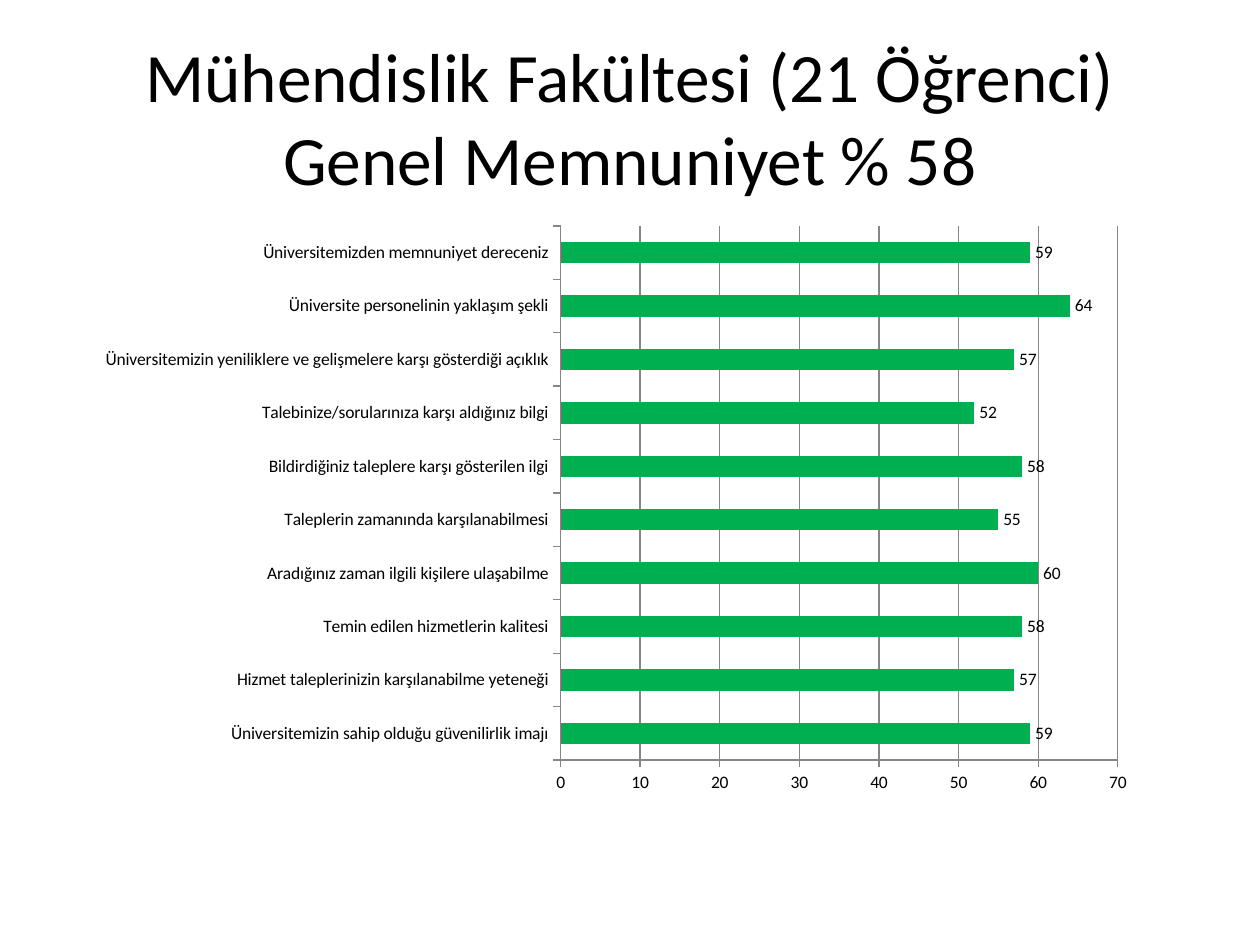
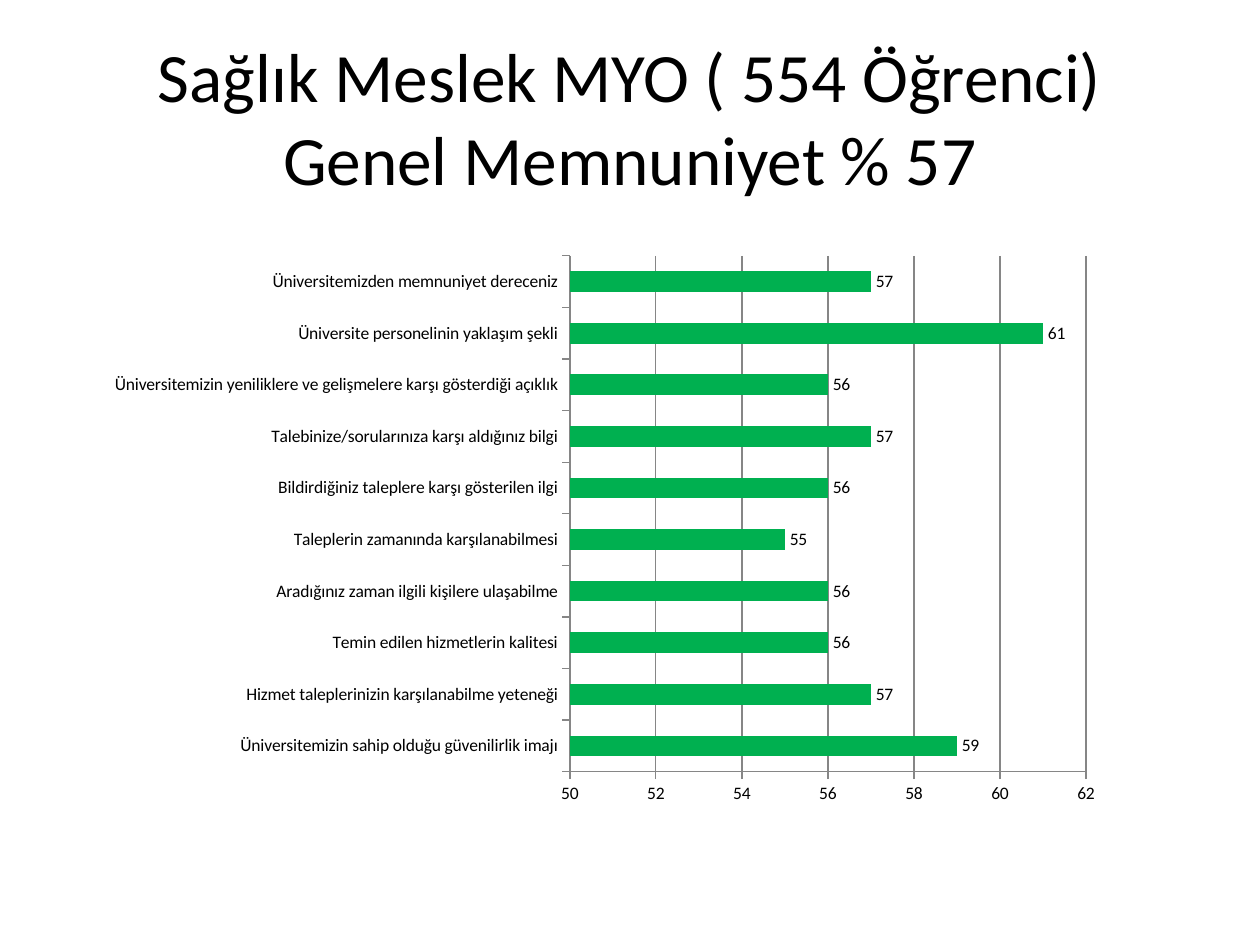
"""Build two survey slides with a satisfaction bar chart each."""
from dataclasses import dataclass

from pptx import Presentation
from pptx.chart.axis import _BaseAxis as Axis
from pptx.chart.data import CategoryChartData as ChartData
from pptx.dml.color import RGBColor
from pptx.enum.chart import XL_CHART_TYPE as ChartType
from pptx.enum.chart import XL_LABEL_POSITION as LabelPosition
from pptx.enum.chart import XL_TICK_MARK as TickMark
from pptx.enum.text import MSO_ANCHOR as Anchor
from pptx.enum.text import PP_ALIGN as Align
from pptx.slide import Slide
from pptx.util import Pt

FONT = "Calibri"
COLOURS = {"text": "000000", "bar": "00B050", "axis": "868686"}
QUESTIONS = (
    "Üniversitemizin sahip olduğu güvenilirlik imajı",
    "Hizmet taleplerinizin karşılanabilme yeteneği",
    "Temin edilen hizmetlerin kalitesi",
    "Aradığınız zaman ilgili kişilere ulaşabilme",
    "Taleplerin zamanında karşılanabilmesi",
    "Bildirdiğiniz taleplere karşı gösterilen ilgi",
    "Talebinize/sorularınıza karşı aldığınız bilgi",
    "Üniversitemizin yeniliklere ve gelişmelere karşı gösterdiği açıklık",
    "Üniversite personelinin yaklaşım şekli",
    "Üniversitemizden memnuniyet dereceniz",
)


@dataclass(frozen=True)
class Survey:
    """Title, scores and chart layout of one unit's survey."""

    unit: str
    overall: int
    scores: tuple[int, ...]
    frame: tuple[float, float, float, float]
    scale: tuple[int, int, int]


SURVEYS = (
    Survey("Mühendislik Fakültesi (21 Öğrenci)", 58,
           (59, 57, 58, 60, 55, 58, 52, 57, 64, 59),
           (48.2, 122.4, 607.7, 337), (0, 70, 10)),
    Survey("Sağlık Meslek MYO ( 554 Öğrenci)", 57,
           (59, 57, 56, 56, 55, 56, 57, 56, 61, 57),
           (54, 139.7, 583.2, 326.2), (50, 62, 2)),
)


def colour(name: str) -> RGBColor:
    """Look up a named colour."""
    return RGBColor.from_string(COLOURS[name])


def add_title(page: Slide, survey: Survey) -> None:
    """Add the centred two-line title."""
    box = page.shapes.add_textbox(Pt(36), Pt(21.6), Pt(648), Pt(90))
    frame = box.text_frame
    frame.word_wrap = True
    frame.vertical_anchor = Anchor.MIDDLE
    para = frame.paragraphs[0]
    para.text = f"{survey.unit}\vGenel Memnuniyet % {survey.overall}"
    para.alignment = Align.CENTER
    for span in para.runs:
        span.font.name = FONT
        span.font.size = Pt(39.6)
        span.font.color.rgb = colour("text")


def style_axis(axis: Axis) -> None:
    """Give an axis its grey line and outside ticks."""
    axis.major_tick_mark = TickMark.OUTSIDE
    axis.minor_tick_mark = TickMark.NONE
    axis.format.line.color.rgb = colour("axis")
    axis.format.line.width = Pt(0.75)


def add_score_chart(page: Slide, survey: Survey) -> None:
    """Add the bar chart of scores per question."""
    data = ChartData(number_format="0")
    data.categories = QUESTIONS
    data.add_series("Series 1", survey.scores)
    frame = (Pt(length) for length in survey.frame)
    chart = page.shapes.add_chart(ChartType.BAR_CLUSTERED, *frame, data).chart
    chart.has_title = False
    chart.has_legend = False
    chart.font.name = FONT
    chart.font.size = Pt(10)
    chart.font.color.rgb = colour("text")

    scores = chart.value_axis
    scores.minimum_scale, scores.maximum_scale, scores.major_unit = survey.scale
    scores.has_major_gridlines = True
    scores.major_gridlines.format.line.color.rgb = colour("axis")
    scores.major_gridlines.format.line.width = Pt(0.75)
    scores.tick_labels.number_format = "0"
    scores.tick_labels.number_format_is_linked = False
    for axis in (chart.category_axis, scores):
        style_axis(axis)

    plot = chart.plots[0]
    plot.gap_width = 150
    plot.vary_by_categories = False
    bars = plot.series[0].format.fill
    bars.solid()
    bars.fore_color.rgb = colour("bar")
    plot.has_data_labels = True
    labels = plot.data_labels
    labels.show_value = True
    labels.number_format = "0"
    labels.number_format_is_linked = False
    labels.position = LabelPosition.OUTSIDE_END


def main() -> None:
    """Build and save the deck."""
    deck = Presentation()
    deck.slide_width, deck.slide_height = Pt(720), Pt(540)
    for survey in SURVEYS:
        page = deck.slides.add_slide(deck.slide_layouts[6])
        add_title(page, survey)
        add_score_chart(page, survey)
    deck.save("out.pptx")


if __name__ == "__main__":
    main()
